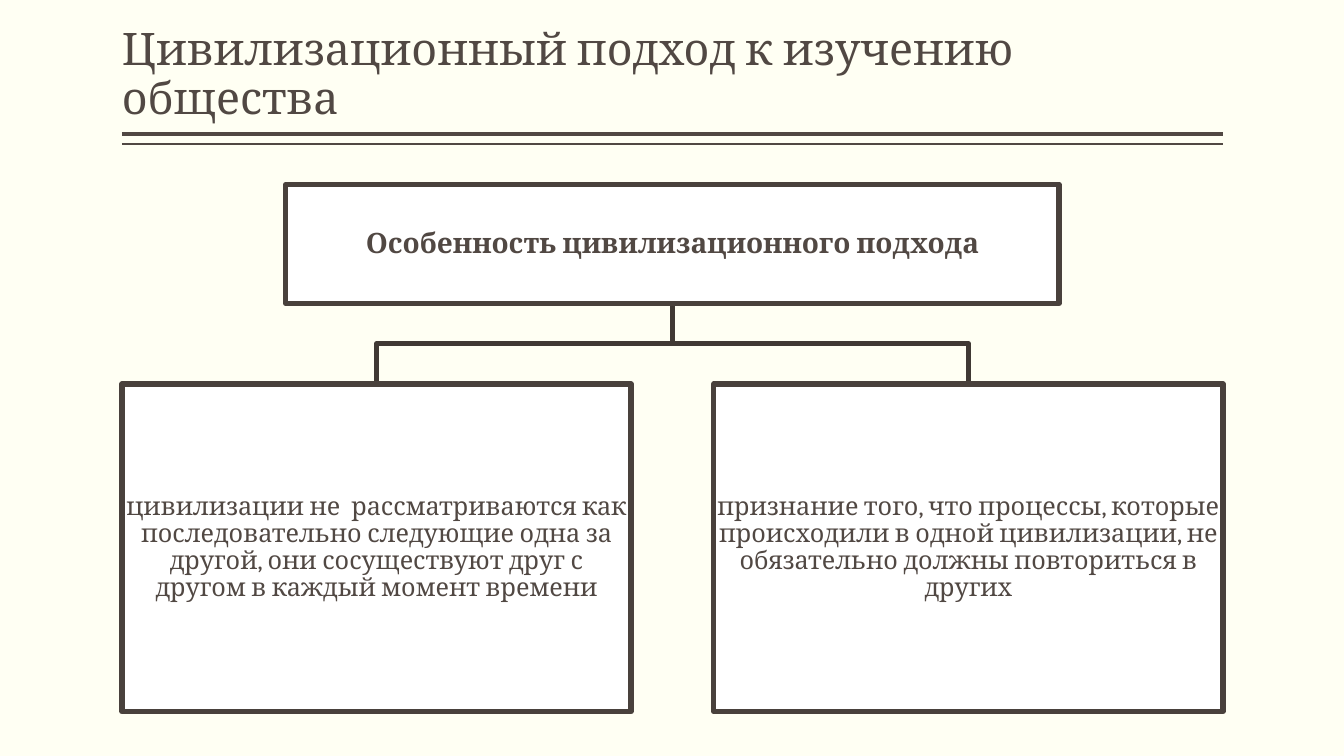
from lxml.etree import SubElement
from pptx import Presentation
from pptx.dml.color import RGBColor
from pptx.enum.shapes import MSO_CONNECTOR, MSO_SHAPE
from pptx.enum.text import MSO_ANCHOR, PP_ALIGN
from pptx.oxml import parse_xml
from pptx.oxml.ns import nsdecls, qn
from pptx.util import Inches, Pt

TITLE = "Цивилизационный подход к изучению общества"
HEADING = "Особенность цивилизационного подхода"
FEATURES = [
    "цивилизации не  рассматриваются как последовательно следующие одна за другой, "
    "они сосуществуют друг с другом в каждый момент времени",
    "признание того, что процессы, которые происходили в одной цивилизации, "
    "не обязательно должны повториться в других",
]
COLORS = {"bg": "FFFFF3", "text": "514843", "box": "FFFFFF",
          "border": "49413C", "branch": "403934", "shadow": "000000"}
FONT = "Cambria"
SLIDE_W, SLIDE_H = 13.33, 7.5
LEFT, WIDTH = 1.21, 10.92
RULES = [(1.33, 3), (1.43, 1)]
HEAD_TOP, HEAD_W, HEAD_H = 1.83, 7.67, 1.18
BOX_TOP, BOX_W, BOX_H = 3.81, 5.05, 3.25
BORDER = 3.78


def rgb(name):
    """Return a named colour."""
    return RGBColor.from_string(COLORS[name])


def set_line(sp, color, width):
    """Give a shape an outline with rounded corners."""
    sp.line.color.rgb = rgb(color)
    sp.line.width = Pt(width)
    SubElement(sp.line._get_or_add_ln(), qn("a:round"))


def add_text(sp, text, size, bold=False, align=PP_ALIGN.CENTER,
             anchor=MSO_ANCHOR.MIDDLE, margins=(0.01, 0.01)):
    """Write shadowed text into a shape."""
    tf = sp.text_frame
    tf.word_wrap = True
    tf.vertical_anchor = anchor
    tf.margin_left = tf.margin_right = Inches(margins[0])
    tf.margin_top = tf.margin_bottom = Inches(margins[1])
    p = tf.paragraphs[0]
    p.alignment = align
    p.line_spacing = 0.9
    r = p.add_run()
    r.text = text
    r.font.name = FONT
    r.font.size = Pt(size)
    r.font.bold = bold
    r.font.color.rgb = rgb("text")
    r.font._element.find(qn("a:solidFill")).addnext(parse_xml(
        f'<a:effectLst {nsdecls("a")}><a:outerShdw blurRad="38100" dist="38100" '
        f'dir="2700000" algn="tl"><a:srgbClr val="{COLORS["shadow"]}">'
        '<a:alpha val="43000"/></a:srgbClr></a:outerShdw></a:effectLst>'))


def add_box(s, x, y, w, h, text, size, bold=False):
    """Add a bordered box with centred text."""
    sp = s.shapes.add_shape(MSO_SHAPE.RECTANGLE, *map(Inches, (x, y, w, h)))
    sp.shadow.inherit = False
    sp.fill.solid()
    sp.fill.fore_color.rgb = rgb("box")
    set_line(sp, "border", BORDER)
    add_text(sp, text, size, bold)


def add_branch(s, points):
    """Add an open bent line through the points."""
    start, *rest = [(Inches(x), Inches(y)) for x, y in points]
    fb = s.shapes.build_freeform(*start)
    fb.add_line_segments(rest, close=False)
    sp = fb.convert_to_shape()
    sp.shadow.inherit = False
    sp.fill.background()
    set_line(sp, "branch", BORDER)


def main():
    """Build the slide."""
    prs = Presentation()
    prs.slide_width, prs.slide_height = Inches(SLIDE_W), Inches(SLIDE_H)
    s = prs.slides.add_slide(prs.slide_layouts[6])
    s.background.fill.solid()
    s.background.fill.fore_color.rgb = rgb("bg")

    for y, width in RULES:
        rule = s.shapes.add_connector(
            MSO_CONNECTOR.STRAIGHT, *map(Inches, (LEFT, y, LEFT + WIDTH, y)))
        set_line(rule, "text", width)
        SubElement(rule._element.spPr, qn("a:effectLst"))

    title = s.shapes.add_textbox(*map(Inches, (LEFT, 0.08, WIDTH, 1.2)))
    add_text(title, TITLE, 32, align=PP_ALIGN.LEFT,
             anchor=MSO_ANCHOR.BOTTOM, margins=(0, 0.05))

    center = LEFT + WIDTH / 2
    head_bottom = HEAD_TOP + HEAD_H
    bend = (head_bottom + BOX_TOP) / 2
    step = (WIDTH - BOX_W) / (len(FEATURES) - 1)
    lefts = [LEFT + i * step for i in range(len(FEATURES))]
    for x in lefts:
        mid = x + BOX_W / 2
        add_branch(s, [(center, head_bottom), (center, bend), (mid, bend), (mid, BOX_TOP)])
    add_box(s, center - HEAD_W / 2, HEAD_TOP, HEAD_W, HEAD_H, HEADING, 20, bold=True)
    for x, text in zip(lefts, FEATURES):
        add_box(s, x, BOX_TOP, BOX_W, BOX_H, text, 18)

    prs.save("out.pptx")


if __name__ == "__main__":
    main()
